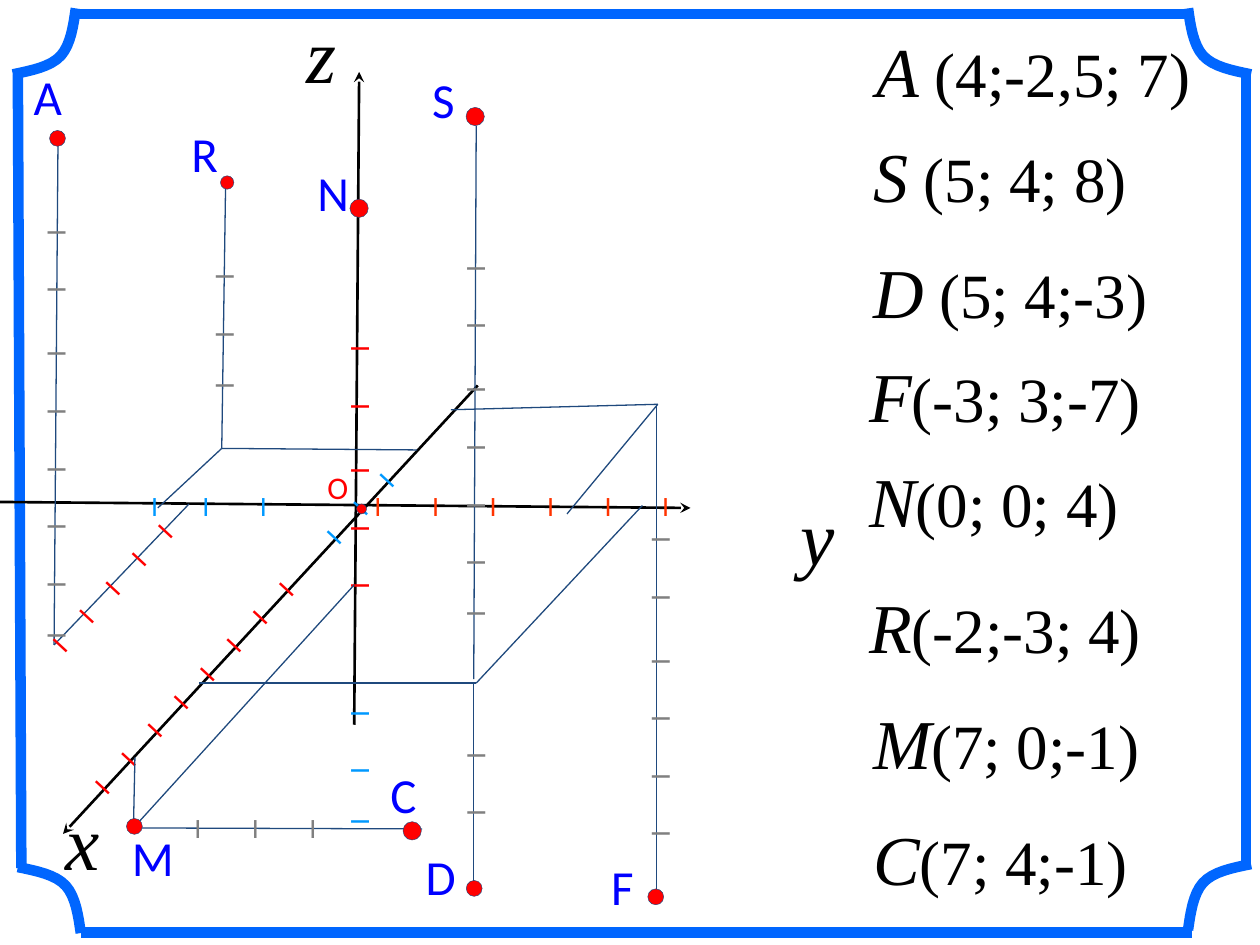
from dataclasses import dataclass
from itertools import accumulate, pairwise

from lxml import etree
from pptx import Presentation
from pptx import util as u
from pptx.dml.color import RGBColor
from pptx.enum import shapes, text
from pptx.oxml.ns import qn


@dataclass(frozen=True)
class Theme:
    black: str = "000000"
    frame: str = "0066FF"
    guide: str = "1F497D"
    dot: str = "FF0000"
    name: str = "0000FF"
    gray: str = "808080"
    orange: str = "FF3300"
    sky: str = "0099FF"
    serif: str = "Times New Roman"
    sans: str = "Calibri"
    axis_size: int = 44
    letter_size: int = 40
    value_size: int = 36
    name_size: int = 28
    origin_size: int = 18
    tick_size: int = 16


@dataclass(frozen=True)
class Box:
    left: float
    top: float
    width: float
    height: float

    def at(self, x, y):
        return u.Cm(self.left + x), u.Cm(self.top + y)


THEME = Theme()
NARROW, SHORT, STEP, LONG = 0.78, 1.03, 1.16, 1.29
TICK_HEIGHT = 0.94
UP, SLANTED = 270, 312.8


def paint_line(shape, colour, width):
    shape.line.color.rgb = RGBColor.from_string(colour)
    shape.line.width = u.Pt(width)


def add_line(page, box, start, end, colour, width, arrow=False):
    line = page.shapes.add_connector(
        shapes.MSO_CONNECTOR.STRAIGHT, *box.at(*start), *box.at(*end))
    paint_line(line, colour, width)
    properties = line.element.spPr
    if arrow:
        etree.SubElement(properties.find(qn("a:ln")), qn("a:tailEnd"), type="stealth")
    etree.SubElement(properties, qn("a:effectLst"))


def add_curve(page, box, points, colour, width):
    corners = [box.at(*point) for point in points]
    builder = page.shapes.build_freeform(*corners[0])
    builder.add_line_segments(corners[1:], close=False)
    curve = builder.convert_to_shape()
    curve.shadow.inherit = False
    curve.fill.background()
    paint_line(curve, colour, width)


def add_text(page, box, place, size, spans, wrap=True):
    label = page.shapes.add_textbox(*box.at(*place), *map(u.Cm, size))
    label.text_frame.word_wrap = wrap
    label.text_frame.auto_size = text.MSO_AUTO_SIZE.SHAPE_TO_FIT_TEXT
    para = label.text_frame.paragraphs[0]
    for words, font, points, colour, italic in spans:
        span = para.add_run()
        span.text = words
        span.font.name = font
        span.font.size = u.Pt(points)
        span.font.color.rgb = RGBColor.from_string(colour)
        span.font.italic = italic
    return label


def add_ticks(page, box, place, width, rotation, gaps, colours):
    marks = ["I\t"] * len(gaps) + ["I"]
    spans, first = [], 0
    for count, colour in colours:
        words = "".join(marks[first:first + count])
        spans.append((words, THEME.sans, THEME.tick_size, colour, False))
        first += count
    label = add_text(page, box, place, (width, TICK_HEIGHT), spans)
    label.rotation = rotation
    properties = label.text_frame.paragraphs[0]._p.get_or_add_pPr()
    stops = etree.SubElement(properties, qn("a:tabLst"))
    for position in accumulate(gaps):
        etree.SubElement(stops, qn("a:tab"), pos=str(int(u.Cm(position))), algn="l")


def add_dot(page, box, centre, diameter):
    x, y = centre
    dot = page.shapes.add_shape(
        shapes.MSO_SHAPE.OVAL, *box.at(x - diameter / 2, y - diameter / 2),
        u.Cm(diameter), u.Cm(diameter))
    dot.shadow.inherit = False
    dot.fill.solid()
    dot.fill.fore_color.rgb = RGBColor.from_string(THEME.dot)
    paint_line(dot, THEME.guide, 0.25)


def bezier(a, b, c, d, steps=8):
    for i in range(steps + 1):
        t = i / steps
        yield tuple((1 - t) ** 3 * p + 3 * t * (1 - t) ** 2 * q
                    + 3 * t * t * (1 - t) * r + t ** 3 * s
                    for p, q, r, s in zip(a, b, c, d))


def draw_frame(page, box):
    right, bottom = box.width, box.height
    for start, end in [((1.14, 0), (right - 1.12, 0)),
                       ((1.27, bottom), (right - 1.09, bottom)),
                       ((right, 1.22), (right, bottom - 1.3)),
                       ((0, 1.22), (0.07, bottom - 1.3))]:
        add_line(page, box, start, end, THEME.frame, 6)
    bend = [(0, 0), (0.38, 0.08), (0.76, 0.15), (0.97, 0.38),
            (1.17, 0.61), (1.22, 0.99), (1.27, 1.33)]
    arc = [*bezier(*bend[:4]), *list(bezier(*bend[3:]))[1:]]
    for x, y, across, down in [(-0.1, 1.22, 1, -1), (right + 0.1, 1.22, -1, -1),
                               (0, bottom - 1.32, 1, 1), (right + 0.1, bottom - 1.38, -1, 1)]:
        points = [(x + across * dx, y + down * dy) for dx, dy in arc]
        add_curve(page, box, points, THEME.frame, 6)


def draw_axes(page, box):
    red, sky = THEME.dot, THEME.sky
    axes = [("x", (9.63, 7.77), (1.27, 16.81), (1.07, 15.88), 1.3),
            ("y", (-0.99, 10.11), (13.92, 10.24), (15.88, 9.73), 1.19),
            ("z", (7.14, 14.61), (7.24, 1.45), (5.92, 0), 1.12)]
    for letter, start, end, place, width in axes:
        add_line(page, box, start, end, THEME.black, 1.5, arrow=True)
        add_text(page, box, place, (width, 2.11),
                 [(letter, THEME.serif, THEME.axis_size, THEME.black, True)], wrap=False)
    add_ticks(page, box, (-0.46, 10.41), 14.22, SLANTED,
              [NARROW] * 7 + [1.42] + [NARROW] * 2, [(8, red), (3, sky)])
    add_ticks(page, box, (2.8, 9.73), 13.97, 0,
              [SHORT, STEP, 2.31] + [STEP] * 5, [(3, sky), (6, THEME.orange)])
    add_ticks(page, box, (0.66, 9.86), 13.13, UP,
              [SHORT, STEP, 2.57, STEP, STEP, LONG, STEP], [(3, sky), (5, red)])
    add_text(page, box, (6.35, 9.32), (1.6, 1.27),
             [("О", THEME.sans, THEME.origin_size, red, False)])
    add_dot(page, box, (7.29, 10.26), 0.2)


def draw_points(page, box):
    guides = [[(2.72, 16.69), (8.51, 16.71)],
              [(4.01, 13.77), (9.6, 13.77), (12.95, 10.19)],
              [(9.55, 13.69), (9.6, 2.54)],
              [(9.55, 17.88), (9.55, 13.79)],
              [(9.09, 8.26), (13.26, 8.15), (11.43, 10.36)],
              [(13.23, 8.18), (13.23, 18.03)],
              [(3.18, 10.24), (4.47, 9.04), (8.41, 9.07)],
              [(4.47, 9.04), (4.55, 3.56)],
              [(2.72, 15.27), (2.69, 16.69), (7.14, 11.79)],
              [(3.81, 10.16), (1.09, 13), (1.17, 2.74)]]
    for guide in guides:
        for start, end in pairwise(guide):
            add_line(page, box, start, end, THEME.guide, 0.75)
    ticks = [((3.67, 16.21), 3.81, 0, [STEP] * 2, THEME.gray),
             ((4.9, 7.57), 9.32, UP, [SHORT, STEP, STEP, STEP, LONG, STEP], THEME.gray),
             ((9.27, 12.65), 8.03, UP, [STEP, STEP, STEP, LONG, STEP], THEME.gray),
             ((8.51, 15.19), 2.11, UP, [STEP], THEME.gray),
             ((2.59, 5.72), 3.81, UP, [SHORT, STEP], THEME.gray),
             ((-5.46, 6.1), 13.13, UP, [SHORT] + [STEP] * 4 + [LONG, STEP], THEME.gray),
             ((0.25, 11.1), 4.5, SLANTED, [NARROW] * 4, THEME.dot)]
    for place, width, rotation, gaps, colour in ticks:
        add_ticks(page, box, place, width, rotation, gaps, [(len(gaps) + 1, colour)])
    points = [("A", (1.16, 2.79), 0.32, (0.43, 1.22)), ("R", (4.58, 3.68), 0.27, (3.61, 2.36)),
              ("N", (7.24, 4.2), 0.37, (6.15, 3.15)), ("S", (9.58, 2.35), 0.37, (8.46, 1.27)),
              ("M", (2.71, 16.66), 0.32, (2.41, 16.56)), ("C", (8.31, 16.75), 0.37, (7.62, 15.29)),
              ("D", (9.56, 17.91), 0.32, (8.33, 16.94)), ("F", (13.22, 18.08), 0.32, (12.07, 17.15))]
    for letter, centre, diameter, place in points:
        add_dot(page, box, centre, diameter)
        add_text(page, box, place, (1.6, 1.45),
                 [(letter, THEME.sans, THEME.name_size, THEME.name, False)])


def draw_coordinates(page, box):
    rows = [("A", " (4;-2,5; 7)", 0.15, 0, 7.06), ("S", " (5; 4; 8)", 0.08, 2.11, 5.84),
            ("D", " (5; 4;-3)", 0.08, 4.45, 6.2), ("F", "(-3; 3;-7)", 0, 6.56, 6.22),
            ("N", "(0; 0; 4)", 0, 8.66, 5.77), ("R", "(-2;-3; 4)", 0, 11.2, 6.22),
            ("M", "(7; 0;-1)", 0.08, 13.54, 6.1), ("C", "(7; 4;-1)", 0.08, 15.88, 5.79)]
    for letter, values, x, y, width in rows:
        add_text(page, box, (x, y), (width, 1.96),
                 [(letter, THEME.serif, THEME.letter_size, THEME.black, True),
                  (values, THEME.serif, THEME.value_size, THEME.black, False)], wrap=False)


def main():
    deck = Presentation()
    deck.slide_width, deck.slide_height = u.Cm(25.4), u.Cm(19.05)
    page = deck.slides.add_slide(deck.slide_layouts[6])
    plot = Box(0, 0, 17, 19.05)
    draw_frame(page, Box(0.36, 0.28, 24.76, 18.52))
    draw_axes(page, plot)
    draw_points(page, plot)
    draw_coordinates(page, Box(17.27, 0.43, 7.21, 17.84))
    deck.save("out.pptx")


if __name__ == "__main__":
    main()
